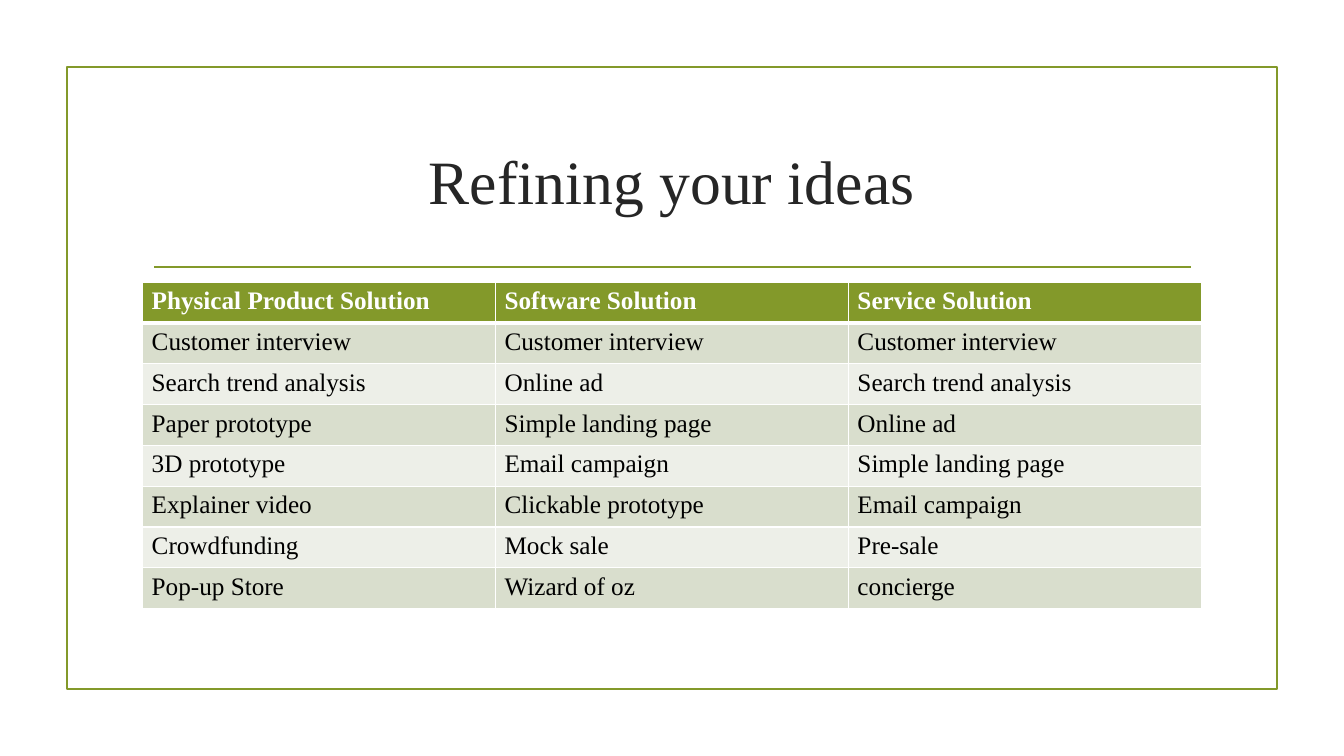
from lxml.etree import SubElement
from pptx import Presentation
from pptx.dml.color import RGBColor
from pptx.enum.shapes import MSO_CONNECTOR, MSO_SHAPE
from pptx.enum.text import MSO_ANCHOR, PP_ALIGN
from pptx.oxml.ns import qn
from pptx.util import Inches, Pt

THEME = {
    "font": "Times New Roman",
    "green": "83992A",
    "title": "262626",
    "body": "000000",
    "white": "FFFFFF",
    "bands": ("D9DECD", "EDEFE8"),
    "title_size": 44,
    "table_size": 18,
    "line": 1.25,
    "border": 1,
    "header_border": 3,
}
WIDTH, HEIGHT = 13.33, 7.5
COLUMN, ROW = 3.5, 0.405

SOLUTIONS = [
    ("Physical Product Solution", "Software Solution", "Service Solution"),
    ("Customer interview", "Customer interview", "Customer interview"),
    ("Search trend analysis", "Online ad", "Search trend analysis"),
    ("Paper prototype", "Simple landing page", "Online ad"),
    ("3D prototype", "Email campaign", "Simple landing page"),
    ("Explainer video", "Clickable prototype", "Email campaign"),
    ("Crowdfunding", "Mock sale", "Pre-sale"),
    ("Pop-up Store", "Wizard of oz", "concierge"),
]


def write(frame, text, size, color, bold=False, align=PP_ALIGN.LEFT):
    para = frame.paragraphs[0]
    para.alignment = align
    span = para.add_run()
    span.text = text
    span.font.name = THEME["font"]
    span.font.size = Pt(size)
    span.font.bold = bold
    span.font.color.rgb = RGBColor.from_string(color)


def add_border(cell, side, width):
    properties = cell._tc.get_or_add_tcPr()
    edge = SubElement(properties, qn(f"a:ln{side}"), w=str(Pt(width)))
    fill = SubElement(edge, qn("a:solidFill"))
    SubElement(fill, qn("a:srgbClr"), val=THEME["white"])


deck = Presentation()
deck.slide_width, deck.slide_height = Inches(WIDTH), Inches(HEIGHT)
page = deck.slides.add_slide(deck.slide_layouts[6])
green = RGBColor.from_string(THEME["green"])

frame_width, frame_height = 12, 6.17
frame = page.shapes.add_shape(
    MSO_SHAPE.RECTANGLE,
    Inches((WIDTH - frame_width) / 2), Inches((HEIGHT - frame_height) / 2),
    Inches(frame_width), Inches(frame_height),
)
frame.shadow.inherit = False
frame.fill.background()
frame.line.color.rgb = green
frame.line.width = Pt(THEME["line"])

rule_left, rule_right, rule_top = 1.53, 11.81, 2.65
rule = page.shapes.add_connector(
    MSO_CONNECTOR.STRAIGHT,
    Inches(rule_left), Inches(rule_top), Inches(rule_right), Inches(rule_top),
)
rule.line.color.rgb = green
rule.line.width = Pt(THEME["line"])
SubElement(rule._element.spPr, qn("a:effectLst"))

columns, rows = len(SOLUTIONS[0]), len(SOLUTIONS)
left = Inches((WIDTH - columns * COLUMN) / 2)
content_width = Inches(columns * COLUMN)

title = page.shapes.add_textbox(left, Inches(1.07), content_width, Inches(1.43))
title.text_frame.word_wrap = True
title.text_frame.vertical_anchor = MSO_ANCHOR.MIDDLE
write(title.text_frame, "Refining your ideas", THEME["title_size"],
      THEME["title"], align=PP_ALIGN.CENTER)

table = page.shapes.add_table(
    rows, columns, left, Inches(2.8), content_width, Inches(rows * ROW)
).table
for row, names in enumerate(SOLUTIONS):
    header = row == 0
    for column, name in enumerate(names):
        cell = table.cell(row, column)
        cell.margin_left = cell.margin_right = Inches(0.09)
        cell.margin_top = cell.margin_bottom = Inches(0.05)
        for side in "LRTB":
            thick = (row, side) in ((0, "B"), (1, "T"))
            add_border(cell, side, THEME["header_border" if thick else "border"])
        cell.fill.solid()
        cell.fill.fore_color.rgb = (
            green if header else RGBColor.from_string(THEME["bands"][(row - 1) % 2])
        )
        write(cell.text_frame, name, THEME["table_size"],
              THEME["white" if header else "body"], bold=header)

deck.save("out.pptx")
